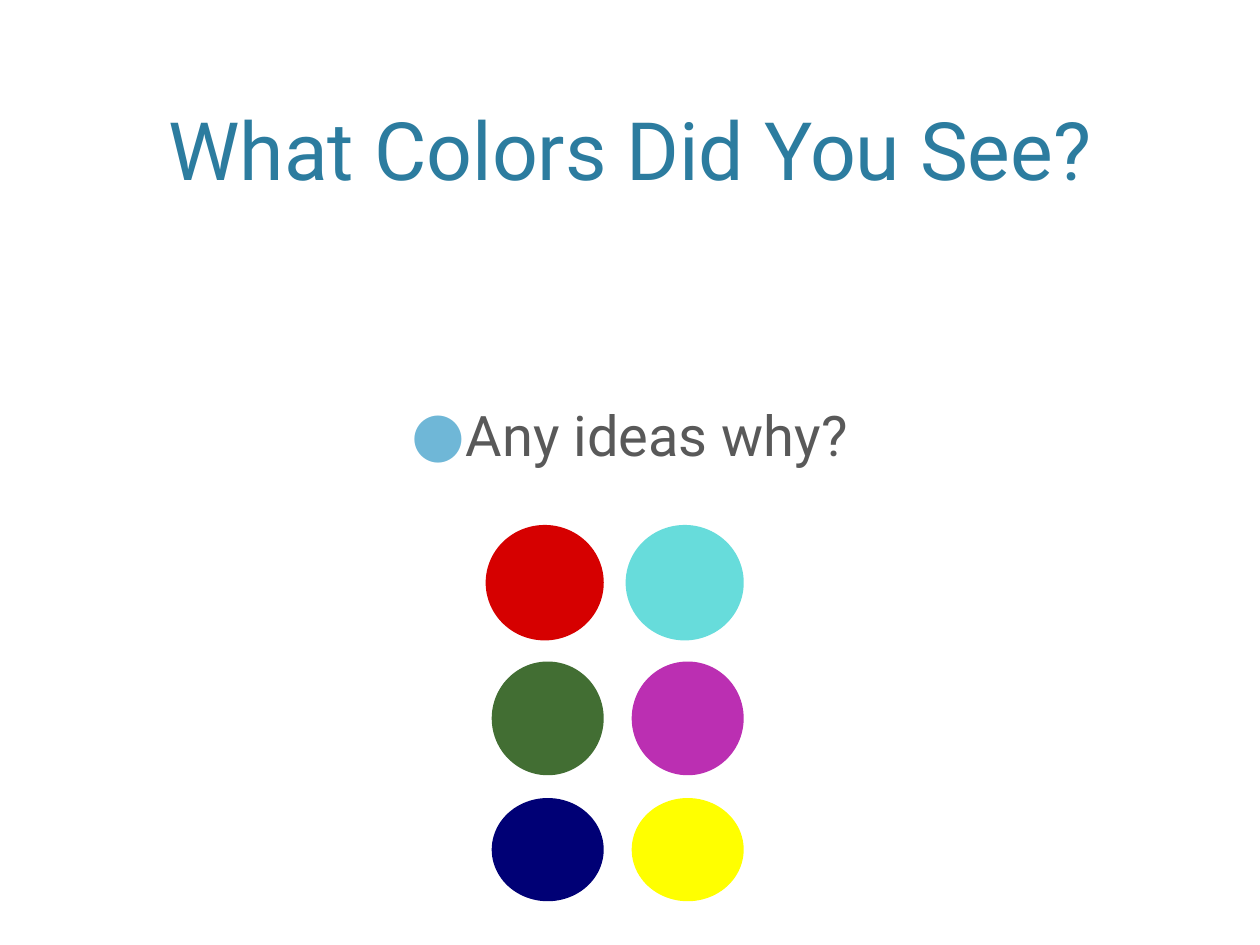
import pptx
import pptx.dml.color
import pptx.enum.shapes
import pptx.enum.text
import pptx.oxml
import pptx.util
from pptx.oxml.ns import nsdecls

Pt = pptx.util.Pt
FONT = "Roboto"
COLUMN_RIGHTS = (345, 425)
FIRST_ROW_TOP = 300
ROW_STEP = 78
# Width and height of the circles in a row, then their colours
CIRCLE_ROWS = [
    (67.5, 66, ("D60000", "67DCDB")),
    (64, 65, ("426E33", "BB2FB2")),
    (64, 59, ("000075", "FFFF00")),
]


def rgb(value):
    return pptx.dml.color.RGBColor.from_string(value)


def place(shape, left, top, width, height):
    shape.left, shape.top = Pt(left), Pt(top)
    shape.width, shape.height = Pt(width), Pt(height)


def fill_placeholder(box, text, size, color, anchor):
    """Write one centred line and return its paragraph."""
    frame = box.text_frame
    frame.text = text
    frame.word_wrap = True
    frame.auto_size = pptx.enum.text.MSO_AUTO_SIZE.NONE
    frame.vertical_anchor = anchor
    para = frame.paragraphs[0]
    para.alignment = pptx.enum.text.PP_ALIGN.CENTER
    para.space_before = Pt(0)
    font = para.runs[0].font
    font.name, font.size = FONT, Pt(size)
    font.color.rgb = rgb(color)
    return para


def add_bullet(para, character, color, percent, indent):
    properties = para._p.get_or_add_pPr()
    properties.set("marL", str(Pt(indent)))
    properties.set("indent", str(-Pt(indent)))
    for markup in (
        f'<a:buClr {nsdecls("a")}><a:srgbClr val="{color}"/></a:buClr>',
        f'<a:buSzPct {nsdecls("a")} val="{percent * 1000}"/>',
        f'<a:buFont {nsdecls("a")} typeface="{FONT}"/>',
        f'<a:buChar {nsdecls("a")} char="{character}"/>',
    ):
        properties.append(pptx.oxml.parse_xml(markup))


def add_circle(page, left, top, width, height, color):
    circle = page.shapes.add_shape(
        pptx.enum.shapes.MSO_SHAPE.OVAL, Pt(left), Pt(top), Pt(width), Pt(height))
    circle.shadow.inherit = False
    circle.fill.solid()
    circle.fill.fore_color.rgb = rgb(color)
    circle.line.fill.background()


def add_circle_grid(page):
    """Draw the rows of circles, aligned on the right edge of each column."""
    for row, (width, height, colors) in enumerate(CIRCLE_ROWS):
        top = FIRST_ROW_TOP + row * ROW_STEP
        for right, color in zip(COLUMN_RIGHTS, colors):
            add_circle(page, right - width, top, width, height, color)


def main():
    deck = pptx.Presentation()
    deck.slide_width, deck.slide_height = Pt(720), Pt(540)
    page = deck.slides.add_slide(deck.slide_layouts[1])
    anchors = pptx.enum.text.MSO_ANCHOR

    title = page.shapes.title
    place(title, 43, 9, 634, 105)
    fill_placeholder(title, "What Colors Did You See?", 46, "2C7C9F", anchors.BOTTOM)
    title.text_frame.margin_bottom = Pt(1.5)

    body = page.placeholders[1]
    place(body, 43, 126, 634, 342)
    question = fill_placeholder(body, "Any ideas why?", 32, "595959", anchors.TOP)
    body.text_frame.margin_top = Pt(103)
    add_bullet(question, "●", "6FB7D7", 110, 27)

    add_circle_grid(page)
    deck.save("out.pptx")


if __name__ == "__main__":
    main()
